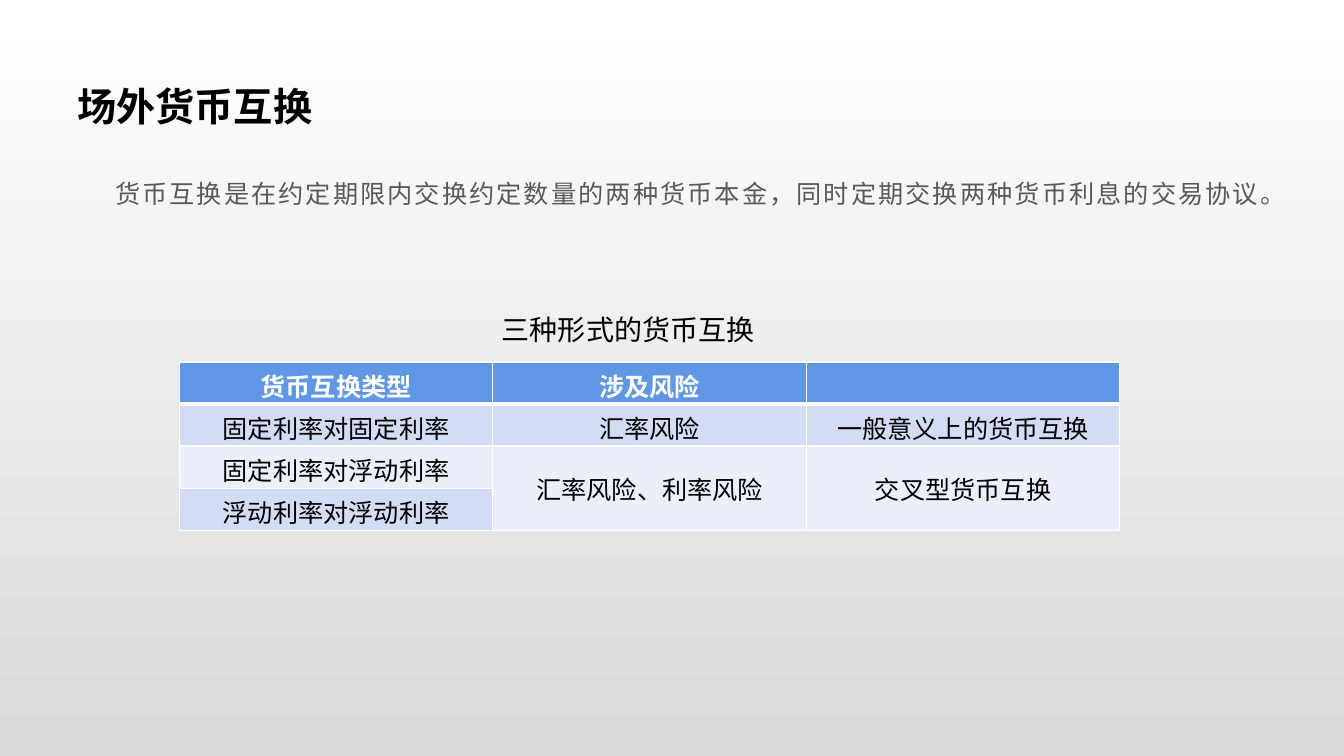
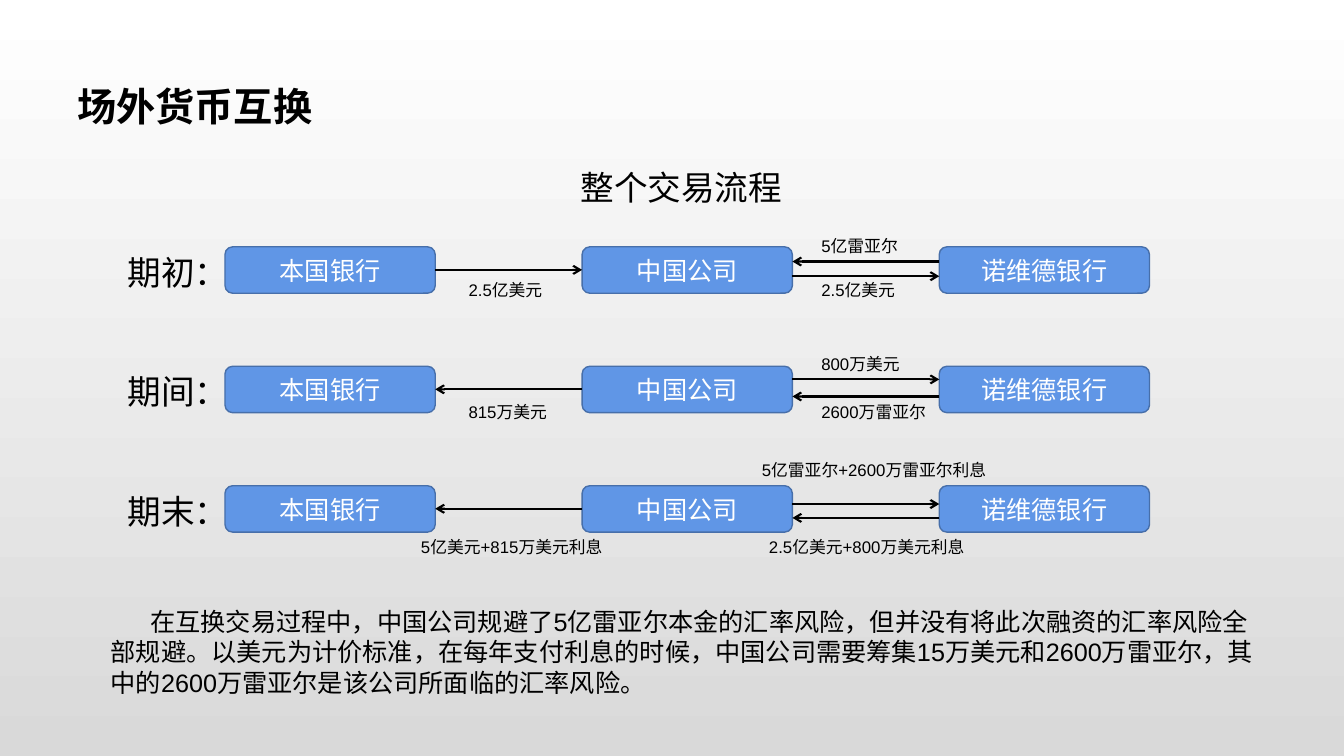
"""Build two slides on over-the-counter currency swaps."""
from dataclasses import dataclass

from lxml import etree
from pptx import Presentation
from pptx import util as u
from pptx.dml.color import RGBColor
from pptx.enum import shapes, text
from pptx.oxml import ns


@dataclass(frozen=True)
class Theme:
    black: str = "000000"
    white: str = "FFFFFF"
    gray: str = "595959"
    backdrop_end: str = "D9D9D9"
    blue: str = "6096E6"
    blue_edge: str = "476FAA"
    band_dark: str = "D2DDF5"
    band_light: str = "EAEFFA"
    latin: str = "Arial"
    chinese: str = "Noto Sans CJK SC"
    title: int = 28
    heading: int = 24
    caption: int = 20
    body: int = 18
    label: int = 12


theme = Theme()
CENTER = text.PP_ALIGN.CENTER
MIDDLE = text.MSO_ANCHOR.MIDDLE


def write(frame, content, size, color=theme.black, bold=False, align=None):
    frame.text = content
    paragraph = frame.paragraphs[0]
    paragraph.alignment = align
    for run in paragraph.runs:
        run.font.size = u.Pt(size)
        run.font.bold = bold
        run.font.color.rgb = RGBColor.from_string(color)
        run.font.name = theme.latin
        east_asian = etree.SubElement(run.font._element, ns.qn("a:ea"))
        east_asian.set("typeface", theme.chinese)
    return paragraph


def add_text(slide, left, top, width, height, content, size, color=theme.black, bold=False):
    box = slide.shapes.add_textbox(u.Cm(left), u.Cm(top), u.Cm(width), u.Cm(height))
    box.text_frame.word_wrap = True
    return box.text_frame, write(box.text_frame, content, size, color, bold)


presentation = Presentation()
presentation.slide_width = u.Cm(33.87)
presentation.slide_height = u.Cm(19.05)

slides = []
for number in range(2):
    slide = presentation.slides.add_slide(presentation.slide_layouts[6])
    backdrop = slide.background.fill
    backdrop.gradient()
    backdrop.gradient_angle = 270
    for stop, color in zip(backdrop.gradient_stops, (theme.white, theme.backdrop_end)):
        stop.color.rgb = RGBColor.from_string(color)
    frame, paragraph = add_text(slide, 1.7, 1.7, 30.48, 1.96, "场外货币互换", theme.title, bold=True)
    frame.vertical_anchor = MIDDLE
    slides.append(slide)
types_slide, process_slide = slides

frame, paragraph = add_text(
    types_slide, 1.7, 4.14, 30.48, 13.2,
    "货币互换是在约定期限内交换约定数量的两种货币本金，同时定期交换两种货币利息的交易协议。",
    theme.body, theme.gray)
paragraph.line_spacing = 1.3
paragraph.space_after = u.Pt(10)
paragraph._p.get_or_add_pPr().set("indent", str(u.Cm(0.95)))
paragraph.runs[0].font._element.set("spc", "150")

add_text(types_slide, 12.4, 7.75, 9.27, 1.12, "三种形式的货币互换", theme.caption)

rows = [
    ("货币互换类型", "涉及风险", ""),
    ("固定利率对固定利率", "汇率风险", "一般意义上的货币互换"),
    ("固定利率对浮动利率", "汇率风险、利率风险", "交叉型货币互换"),
    ("浮动利率对浮动利率", "", ""),
]
row_fills = [theme.blue, theme.band_dark, theme.band_light, theme.band_dark]
table = types_slide.shapes.add_table(
    4, 3, u.Cm(4.52), u.Cm(9.12), u.Cm(23.7), u.Cm(4.24)).table
for column in table.columns:
    column.width = u.Cm(7.9)
for row_index, row in enumerate(rows):
    table.rows[row_index].height = u.Cm(1.06)
    header = row_index == 0
    for column_index, content in enumerate(row):
        cell = table.cell(row_index, column_index)
        write(cell.text_frame, content, theme.body,
              theme.white if header else theme.black, header, CENTER)
        cell.fill.solid()
        cell.fill.fore_color.rgb = RGBColor.from_string(row_fills[row_index])
        properties = cell._tc.get_or_add_tcPr()
        for position, side in enumerate("LRTB"):
            thick = (row_index, side) in ((0, "B"), (1, "T"))
            border = etree.Element(ns.qn(f"a:ln{side}"), w=str(u.Pt(3 if thick else 1)))
            fill = etree.SubElement(border, ns.qn("a:solidFill"))
            etree.SubElement(fill, ns.qn("a:srgbClr"), val=theme.white)
            properties.insert(position, border)
for column_index in (1, 2):
    merged = table.cell(2, column_index)
    merged.merge(table.cell(3, column_index))
    merged.vertical_anchor = MIDDLE

add_text(process_slide, 14.38, 4.09, 6.93, 1.27, "整个交易流程", theme.heading)

parties = ["本国银行", "中国公司", "诺维德银行"]
box_left, box_pitch, box_width, box_height = 5.67, 9, 5.3, 1.17
first_row, row_pitch = 6.22, 3.01
stages = [
    ("期初：", [
        (0, 0.58, "→", "2.5亿美元", 11.56, 0.71),
        (1, 0.37, "←", "5亿雷亚尔", 20.45, -0.41),
        (1, 0.74, "→", "2.5亿美元", 20.45, 0.71),
    ]),
    ("期间：", [
        (0, 0.58, "←", "815万美元", 11.56, 0.76),
        (1, 0.33, "→", "800万美元", 20.45, -0.43),
        (1, 0.76, "←", "2600万雷亚尔", 20.45, 0.76),
    ]),
    ("期末：", [
        (0, 0.58, "←", "5亿美元+815万美元利息", 10.36, 1.17),
        (1, 0.46, "→", "5亿雷亚尔+2600万雷亚尔利息", 18.95, -0.79),
        (1, 0.81, "←", "2.5亿美元+800万美元利息", 19.13, 1.17),
    ]),
]
for stage_index, (stage, flows) in enumerate(stages):
    top = first_row + stage_index * row_pitch
    add_text(process_slide, 2.97, top, 2.4, 1.27, stage, theme.heading)
    for party_index, party in enumerate(parties):
        shape = process_slide.shapes.add_shape(
            shapes.MSO_SHAPE.ROUNDED_RECTANGLE, u.Cm(box_left + party_index * box_pitch),
            u.Cm(top), u.Cm(box_width), u.Cm(box_height))
        shape.shadow.inherit = False
        shape.fill.solid()
        shape.fill.fore_color.rgb = RGBColor.from_string(theme.blue)
        shape.line.color.rgb = RGBColor.from_string(theme.blue_edge)
        shape.line.width = u.Pt(1)
        shape.text_frame.vertical_anchor = MIDDLE
        write(shape.text_frame, party, theme.body, theme.white, align=CENTER)
    for gap, offset, direction, label, label_left, label_offset in flows:
        start = box_left + gap * box_pitch + box_width
        end = box_left + (gap + 1) * box_pitch
        if direction == "←":
            start, end = end, start
        arrow = process_slide.shapes.add_connector(
            shapes.MSO_CONNECTOR.STRAIGHT, u.Cm(start), u.Cm(top + offset),
            u.Cm(end), u.Cm(top + offset))
        arrow.line.color.rgb = RGBColor.from_string(theme.black)
        arrow.line.width = u.Pt(1.5)
        etree.SubElement(arrow.line._get_or_add_ln(), ns.qn("a:tailEnd"), type="arrow")
        etree.SubElement(arrow._element.spPr, ns.qn("a:effectLst"))
        add_text(process_slide, label_left, top + label_offset, 6.76, 0.76, label, theme.label)

frame, paragraph = add_text(
    process_slide, 2.54, 15.16, 29.36, 2.57,
    "在互换交易过程中，中国公司规避了5亿雷亚尔本金的汇率风险，但并没有将此次融资的汇率风险"
    "全部规避。以美元为计价标准，在每年支付利息的时候，中国公司需要筹集15万美元和2600万雷亚尔，"
    "其中的2600万雷亚尔是该公司所面临的汇率风险。",
    theme.body)
paragraph._p.get_or_add_pPr().set("indent", str(u.Cm(1)))

presentation.save("out.pptx")
